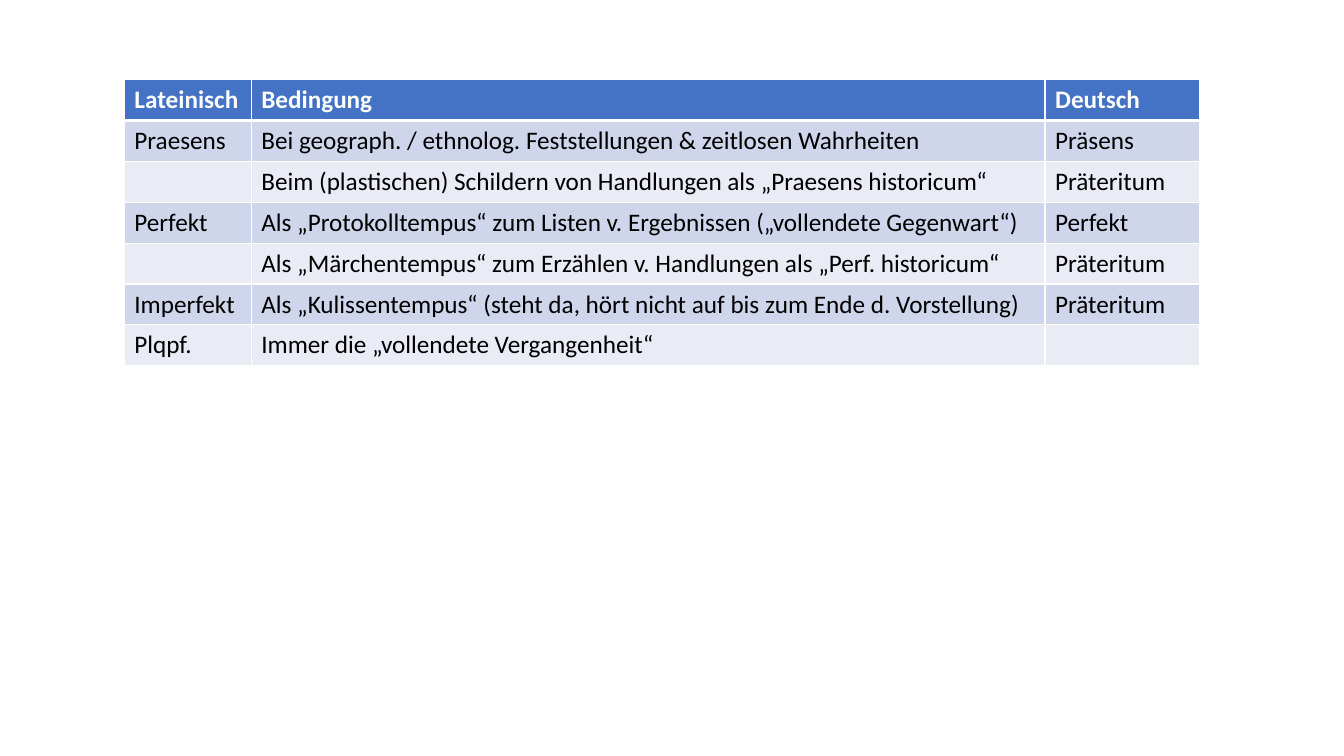
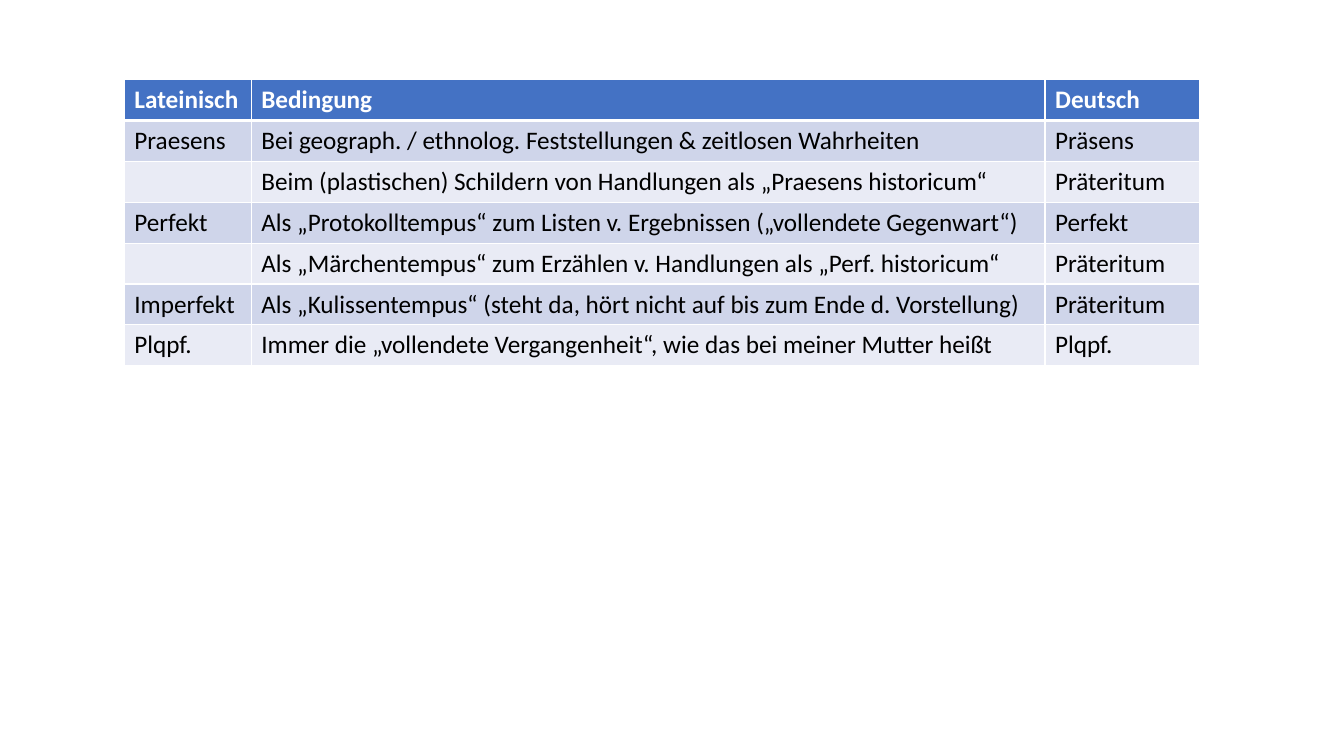
from lxml import etree
from pptx import Presentation
from pptx.dml.color import RGBColor
from pptx.oxml.ns import qn
from pptx.util import Pt

COLORS = {
    "header": "4472C4",
    "odd_row": "CFD5EA",
    "even_row": "E9EBF5",
    "border": "FFFFFF",
    "header_text": "FFFFFF",
    "body_text": "000000",
}
FONT = "Calibri"
FONT_SIZE = 18
BLANK_LAYOUT = 6
TABLE_LEFT, TABLE_TOP = 88.8, 56.9
COLUMN_WIDTHS = (90.7, 567, 110.4)
ROW_HEIGHT = 29.2
THIN, THICK = 1, 3

HEADINGS = ("Lateinisch", "Bedingung", "Deutsch")
TENSES = [
    ("Praesens", "Bei geograph. / ethnolog. Feststellungen & zeitlosen Wahrheiten", "Präsens"),
    ("", "Beim (plastischen) Schildern von Handlungen als „Praesens historicum“", "Präteritum"),
    ("Perfekt", "Als „Protokolltempus“ zum Listen v. Ergebnissen („vollendete Gegenwart“)", "Perfekt"),
    ("", "Als „Märchentempus“ zum Erzählen v. Handlungen als „Perf. historicum“", "Präteritum"),
    ("Imperfekt", "Als „Kulissentempus“ (steht da, hört nicht auf bis zum Ende d. Vorstellung)", "Präteritum"),
]
PLUPERFECT_VERSIONS = [
    ("Plqpf.", "Immer die „vollendete Vergangenheit“", ""),
    ("Plqpf.", "Immer die „vollendete Vergangenheit“, wie das bei meiner Mutter heißt", "Plqpf."),
]


def set_borders(cell, top, bottom):
    """Draw all four edges; top and bottom are widths in points."""
    properties = cell._tc.get_or_add_tcPr()
    for edge, width in (("lnL", THIN), ("lnR", THIN), ("lnT", top), ("lnB", bottom)):
        line = etree.SubElement(properties, qn(f"a:{edge}"), w=str(Pt(width)))
        fill = etree.SubElement(line, qn("a:solidFill"))
        etree.SubElement(fill, qn("a:srgbClr"), val=COLORS["border"])


def format_cell(cell, text, row):
    is_header = row == 0
    set_borders(cell, top=THICK if row == 1 else THIN, bottom=THICK if is_header else THIN)
    band = "header" if is_header else "odd_row" if row % 2 else "even_row"
    cell.fill.solid()
    cell.fill.fore_color.rgb = RGBColor.from_string(COLORS[band])
    paragraph = cell.text_frame.paragraphs[0]
    paragraph.font.size = Pt(FONT_SIZE)
    if not text:
        return
    run = paragraph.add_run()
    run.text = text
    run.font.name = FONT
    run.font.size = Pt(FONT_SIZE)
    run.font.bold = is_header
    text_color = COLORS["header_text" if is_header else "body_text"]
    run.font.color.rgb = RGBColor.from_string(text_color)


def add_tense_table(slide, left, top, rows):
    table = slide.shapes.add_table(
        len(rows), len(COLUMN_WIDTHS), Pt(left), Pt(top),
        Pt(sum(COLUMN_WIDTHS)), Pt(ROW_HEIGHT * len(rows)),
    ).table
    for column, width in zip(table.columns, COLUMN_WIDTHS):
        column.width = Pt(width)
    for row, texts in enumerate(rows):
        table.rows[row].height = Pt(ROW_HEIGHT)
        for column, text in enumerate(texts):
            format_cell(table.cell(row, column), text, row)


def main():
    presentation = Presentation()
    presentation.slide_width, presentation.slide_height = Pt(960), Pt(540)
    for pluperfect in PLUPERFECT_VERSIONS:
        slide = presentation.slides.add_slide(presentation.slide_layouts[BLANK_LAYOUT])
        add_tense_table(slide, TABLE_LEFT, TABLE_TOP, [HEADINGS, *TENSES, pluperfect])
    presentation.save("out.pptx")


if __name__ == "__main__":
    main()
